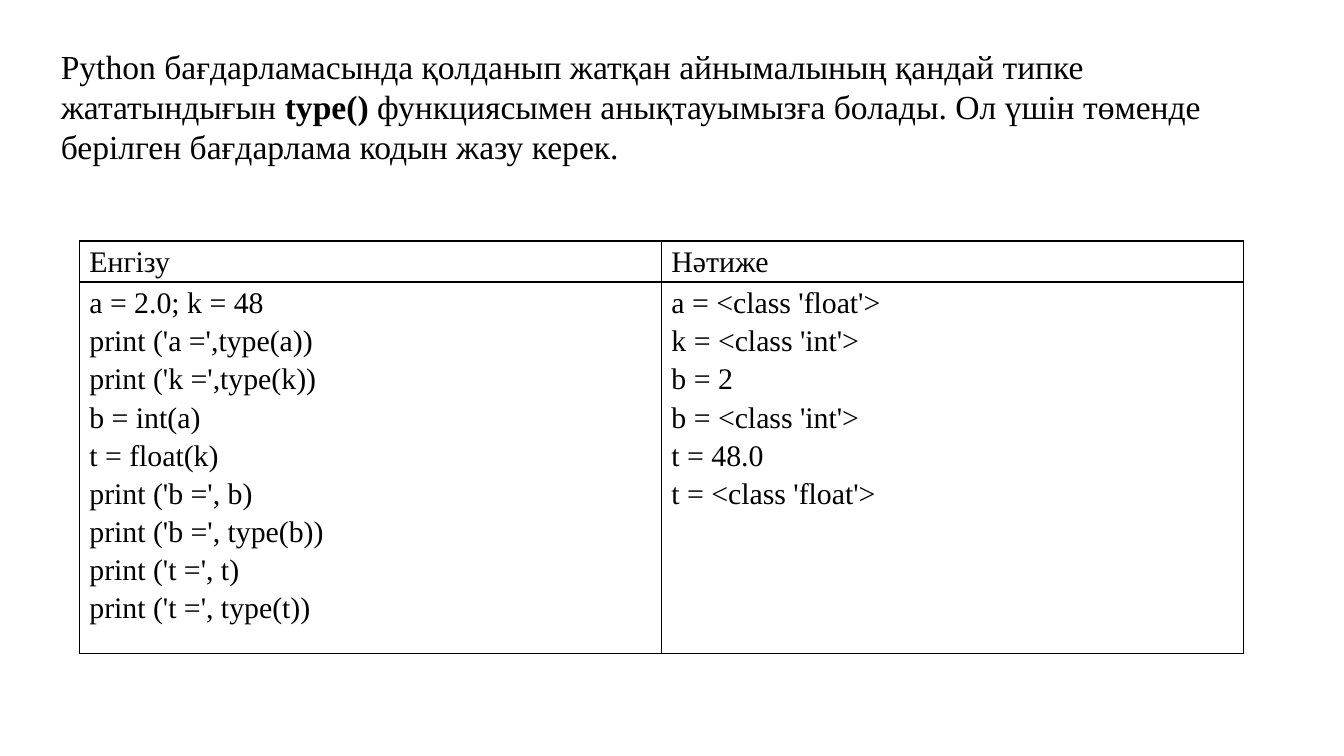
from lxml import etree
from pptx import Presentation
from pptx import util as u
from pptx.dml import color
from pptx.enum import text
from pptx.oxml import ns

theme = {
    "font": "Times New Roman",
    "ink": color.RGBColor(0, 0, 0),
    "border": "000000",
    "border_width": u.Pt(1),
    "intro_size": u.Pt(18),
    "table_size": u.Pt(16),
}


def add_run(paragraph, wording, size, bold=False):
    run = paragraph.add_run()
    run.text = wording
    run.font.color.rgb = theme["ink"]
    for name, value in {"name": theme["font"], "size": size, "bold": bold}.items():
        setattr(run.font, name, value)


def add_borders(cell):
    properties = cell._tc.get_or_add_tcPr()
    for position, side in enumerate(("lnL", "lnR", "lnT", "lnB")):
        line = etree.Element(ns.qn(f"a:{side}"), w=str(theme["border_width"]))
        fill = etree.SubElement(line, ns.qn("a:solidFill"))
        etree.SubElement(fill, ns.qn("a:srgbClr"), val=theme["border"])
        properties.insert(position, line)


presentation = Presentation()
presentation.slide_width = u.Cm(25.4)
presentation.slide_height = u.Cm(14.29)
slide = presentation.slides.add_slide(presentation.slide_layouts[6])

intro = slide.shapes.add_textbox(u.Cm(0.9), u.Cm(0.74), u.Cm(23.8), u.Cm(2.57))
frame_format = {"word_wrap": True, "auto_size": text.MSO_AUTO_SIZE.SHAPE_TO_FIT_TEXT}
for name, value in frame_format.items():
    setattr(intro.text_frame, name, value)
intro_runs = [
    ("Python бағдарламасында қолданып жатқан айнымалының қандай типке жататындығын ", False),
    ("type()", True),
    (" функциясымен анықтауымызға болады. Ол үшін төменде берілген бағдарлама кодын жазу керек.", False),
]
for wording, bold in intro_runs:
    add_run(intro.text_frame.paragraphs[0], wording, theme["intro_size"], bold)

code_lines = [
    "a = 2.0; k = 48",
    "print ('a =',type(a))",
    "print ('k =',type(k))",
    "b = int(a)",
    "t = float(k)",
    "print ('b =', b)",
    "print ('b =', type(b))",
    "print ('t =', t)",
    "print ('t =', type(t))",
]
result_lines = [
    "a = <class 'float'>",
    "k = <class 'int'>",
    "b = 2",
    "b = <class 'int'>",
    "t = 48.0",
    "t = <class 'float'>",
]
rows = [(["Енгізу"], ["Нәтиже"]), (code_lines, result_lines)]

table = slide.shapes.add_table(2, 2, u.Cm(1.5), u.Cm(4.55), u.Cm(22), u.Cm(7.8)).table
for row, height in zip(table.rows, (0.78, 7.02)):
    row.height = u.Cm(height)

cell_format = {
    "margin_left": u.Cm(0.19),
    "margin_right": u.Cm(0.19),
    "margin_top": 0,
    "margin_bottom": 0,
    "vertical_anchor": text.MSO_ANCHOR.TOP,
}
for row_index, row_content in enumerate(rows):
    for column_index, lines in enumerate(row_content):
        cell = table.cell(row_index, column_index)
        for name, value in cell_format.items():
            setattr(cell, name, value)
        cell.fill.background()
        add_borders(cell)
        for line_index, wording in enumerate(lines):
            frame = cell.text_frame
            paragraph = frame.add_paragraph() if line_index else frame.paragraphs[0]
            paragraph.line_spacing = 1.15
            add_run(paragraph, wording, theme["table_size"])

presentation.save("out.pptx")
